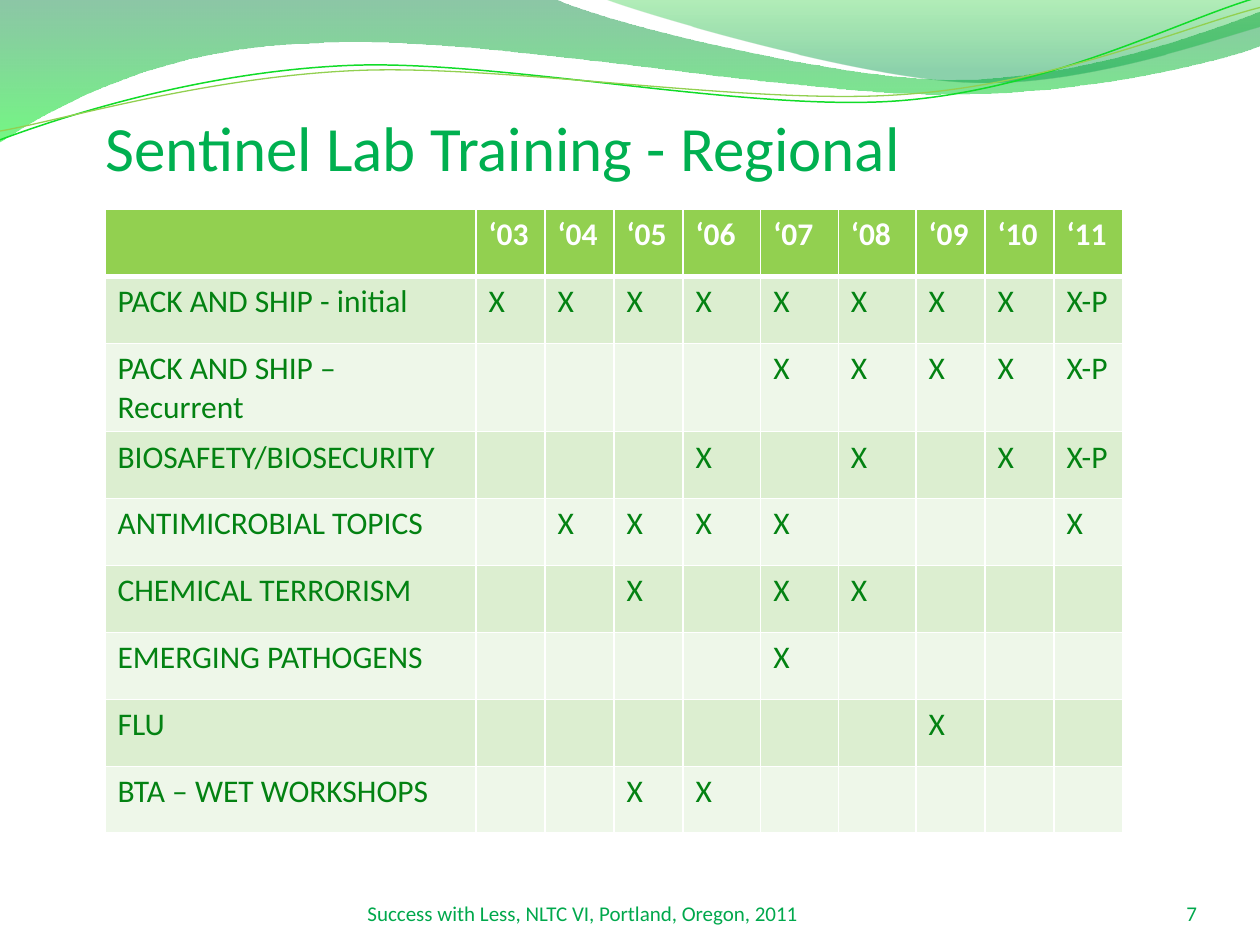
import math

import pptx
import pptx.util
import pptx.dml.color
import pptx.enum.text
import pptx.oxml
import pptx.oxml.ns

Pt = pptx.util.Pt
qn = pptx.oxml.ns.qn
ALIGN = pptx.enum.text.PP_ALIGN
FONT = "Calibri"

# Content
TITLE = "Sentinel Lab Training - Regional"
FOOTER = "Success with Less, NLTC VI, Portland, Oregon, 2011"
PAGE_NUMBER = "7"
YEARS = ["03", "04", "05", "06", "07", "08", "09", "10", "11"]
# Topic, then the mark for each year it was taught
TRAININGS = [
    ("PACK AND SHIP - initial", {**dict.fromkeys(YEARS, "X"), "11": "X-P"}),
    ("PACK AND SHIP – Recurrent",
     {"07": "X", "08": "X", "09": "X", "10": "X", "11": "X-P"}),
    ("BIOSAFETY/BIOSECURITY", {"06": "X", "08": "X", "10": "X", "11": "X-P"}),
    ("ANTIMICROBIAL TOPICS", dict.fromkeys(["04", "05", "06", "07", "11"], "X")),
    ("CHEMICAL TERRORISM", dict.fromkeys(["05", "07", "08"], "X")),
    ("EMERGING PATHOGENS", {"07": "X"}),
    ("FLU", {"09": "X"}),
    ("BTA – WET WORKSHOPS", dict.fromkeys(["05", "06"], "X")),
]

# Table measures and colours
TABLE_LEFT, TABLE_TOP, ROW_HEIGHT = 60, 119.8, 38.25
TOPIC_WIDTH, YEAR_WIDTH, WIDE_YEAR_WIDTH = 212, 39.45, 44.4
WIDE_YEARS = {"06", "07", "08"}
HEADER_FILL, BAND_FILLS = "92D050", ("DCEED0", "EEF7E9")
TOPIC_COLOR, WHITE = "038212", "FFFFFF"

# Waves: start point, then segments of one point (line) or three (Bézier curve)
# Gradient stops: position %, colour, opacity %
BANDS = [
    ((0, 0), [
        [(316.8, -0.7)],
        [(342.7, 12.2), (478.1, 45.4), (545.8, 45.4)],
        [(614.2, 45.4), (689.8, 18.7), (720, 6.5)],
        [(720.7, 25.9)],
        [(707.8, 31.7), (626.4, 54.7), (537.1, 54)],
        [(447.8, 54), (275, 20.2), (185, 24.5)],
        [(92.9, 25.9), (33.1, 59.8), (-0.7, 81.4)],
        [(0, 0)],
    ], [(0, "00823B", 45), (100, "00F31D", 55)]),
    ((344.9, -0.7), [
        [(366.5, 7.9), (491, 44.6), (553.7, 46.8)],
        [(616.3, 49.7), (691.9, 23), (720, 15.1)],
        [(720, 0)],
        [(344.9, -0.7)],
    ], [(0, "00C617", 30), (80, "009B47", 45)]),
]
STRANDS = [
    ((0, 79.9), [
        [(34.6, 67), (113.8, 41), (199.4, 37.4)],
        [(284.4, 33.8), (427, 64.1), (513.4, 57.6)],
        [(599.8, 51.1), (675.4, 10.8), (718.6, -1.4)],
    ], "11DC29", 0.85),
    ((0, 74.9), [
        [(33.8, 69.1), (118.1, 43.9), (203.8, 40.3)],
        [(289.4, 36.7), (429.8, 60.5), (516.2, 54)],
        [(601.9, 48.2), (677.5, 15.1), (720, 4.3)],
    ], "92D050", 0.75),
]
STRAND_TILT, STRAND_PIVOT = -2.7, (359.5, 42)


def rgb(color):
    return pptx.dml.color.RGBColor.from_string(color)


def parse_drawing(tag, attributes, inner):
    namespace = pptx.oxml.ns.nsdecls("a")
    return pptx.oxml.parse_xml(f"<a:{tag} {namespace} {attributes}>{inner}</a:{tag}>")


def before_tilt(point, tilt):
    """Place of a point before its shape is turned by tilt degrees."""
    cos, sin = math.cos(math.radians(-tilt)), math.sin(math.radians(-tilt))
    x, y = (value - centre for value, centre in zip(point, STRAND_PIVOT))
    return STRAND_PIVOT[0] + x * cos - y * sin, STRAND_PIVOT[1] + x * sin + y * cos


def add_wave(slide, start, segments, close, tilt=0):
    points = [start, *(point for segment in segments for point in segment)]
    if tilt:
        points = [before_tilt(point, tilt) for point in points]
    vertices = [(Pt(x), Pt(y)) for x, y in points]
    builder = slide.shapes.build_freeform(*vertices[0], scale=1.0)
    builder.add_line_segments(vertices[1:], close=close)
    wave = builder.convert_to_shape()
    wave.shadow.inherit = False
    wave.rotation = tilt

    # Join each three straight steps of a curved segment into one Bézier curve
    steps = iter(list(wave._element.iter(qn("a:lnTo"))))
    for segment in segments:
        group = [next(steps) for _ in segment]
        if len(group) == 3:
            curve = parse_drawing("cubicBezTo", "", "")
            group[0].addprevious(curve)
            for step in group:
                curve.append(step[0])
                step.getparent().remove(step)
    return wave


def fill_gradient(wave, stops):
    stop_xml = "".join(
        f'<a:gs pos="{position * 1000}"><a:srgbClr val="{color}">'
        f'<a:alpha val="{opacity * 1000}"/></a:srgbClr></a:gs>'
        for position, color, opacity in stops)
    gradient = parse_drawing(
        "gradFill", 'rotWithShape="1"',
        f'<a:gsLst>{stop_xml}</a:gsLst><a:lin ang="5400000" scaled="0"/>')
    wave.line.fill.background()
    wave.fill.background()
    no_fill = wave._element.spPr.find(qn("a:noFill"))
    no_fill.getparent().replace(no_fill, gradient)


def style_text(frame, size, color, bold=False, align=ALIGN.LEFT):
    paragraph = frame.paragraphs[0]
    paragraph.alignment = align
    font = paragraph.runs[0].font if paragraph.runs else paragraph.font
    font.name, font.size, font.bold = FONT, Pt(size), bold
    font.color.rgb = rgb(color)


def add_label(slide, text, box, size, color, align=ALIGN.LEFT, bottom_inset=0):
    frame = slide.shapes.add_textbox(*map(Pt, box)).text_frame
    frame.word_wrap = True
    frame.vertical_anchor = pptx.enum.text.MSO_ANCHOR.BOTTOM
    frame.margin_left = frame.margin_right = frame.margin_top = 0
    frame.margin_bottom = Pt(bottom_inset)
    frame.text = text
    style_text(frame, size, color, align=align)


def set_borders(cell, widths):
    properties = cell._tc.get_or_add_tcPr()
    for index, (side, width) in enumerate(widths.items()):
        properties.insert(index, parse_drawing(
            f"ln{side}", f'w="{Pt(width)}"',
            f'<a:solidFill><a:srgbClr val="{WHITE}"/></a:solidFill>'))


def add_training_table(slide):
    rows = [["", *(f"‘{year}" for year in YEARS)]]
    rows += [[topic, *(marks.get(year, "") for year in YEARS)]
             for topic, marks in TRAININGS]
    widths = [TOPIC_WIDTH] + [WIDE_YEAR_WIDTH if year in WIDE_YEARS else YEAR_WIDTH
                              for year in YEARS]
    table = slide.shapes.add_table(
        len(rows), len(widths), Pt(TABLE_LEFT), Pt(TABLE_TOP),
        Pt(sum(widths)), Pt(ROW_HEIGHT * len(rows))).table
    for column, width in zip(table.columns, widths):
        column.width = Pt(width)
    for r, row in enumerate(rows):
        header = r == 0
        table.rows[r].height = Pt(ROW_HEIGHT)
        for c, text in enumerate(row):
            cell = table.cell(r, c)
            cell.text_frame.text = text
            style_text(cell.text_frame, 18, WHITE if header else TOPIC_COLOR, header)
            cell.fill.solid()
            cell.fill.fore_color.rgb = rgb(HEADER_FILL if header else BAND_FILLS[(r - 1) % 2])
            set_borders(cell, {"L": 1, "R": 1, "T": 3 if r == 1 else 1,
                               "B": 3 if header else 1})


def main():
    deck = pptx.Presentation()
    deck.slide_width, deck.slide_height = Pt(720), Pt(540)
    slide = deck.slides.add_slide(deck.slide_layouts[6])

    # Wave decoration
    for start, segments, stops in BANDS:
        fill_gradient(add_wave(slide, start, segments, True), stops)
    for start, segments, color, width in STRANDS:
        strand = add_wave(slide, start, segments, False, STRAND_TILT)
        strand.fill.background()
        strand.line.color.rgb = rgb(color)
        strand.line.width = Pt(width)

    # Title, footer and page number
    add_label(slide, TITLE, (60.3, 54, 648, 90), 36, "00B050", bottom_inset=39)
    add_label(slide, FOOTER, (210, 500.4, 264, 28.8), 12, "00A84C")
    add_label(slide, PAGE_NUMBER, (624, 500.4, 60, 28.8), 12, "00A84C", ALIGN.RIGHT)

    add_training_table(slide)
    deck.save("out.pptx")


if __name__ == "__main__":
    main()
